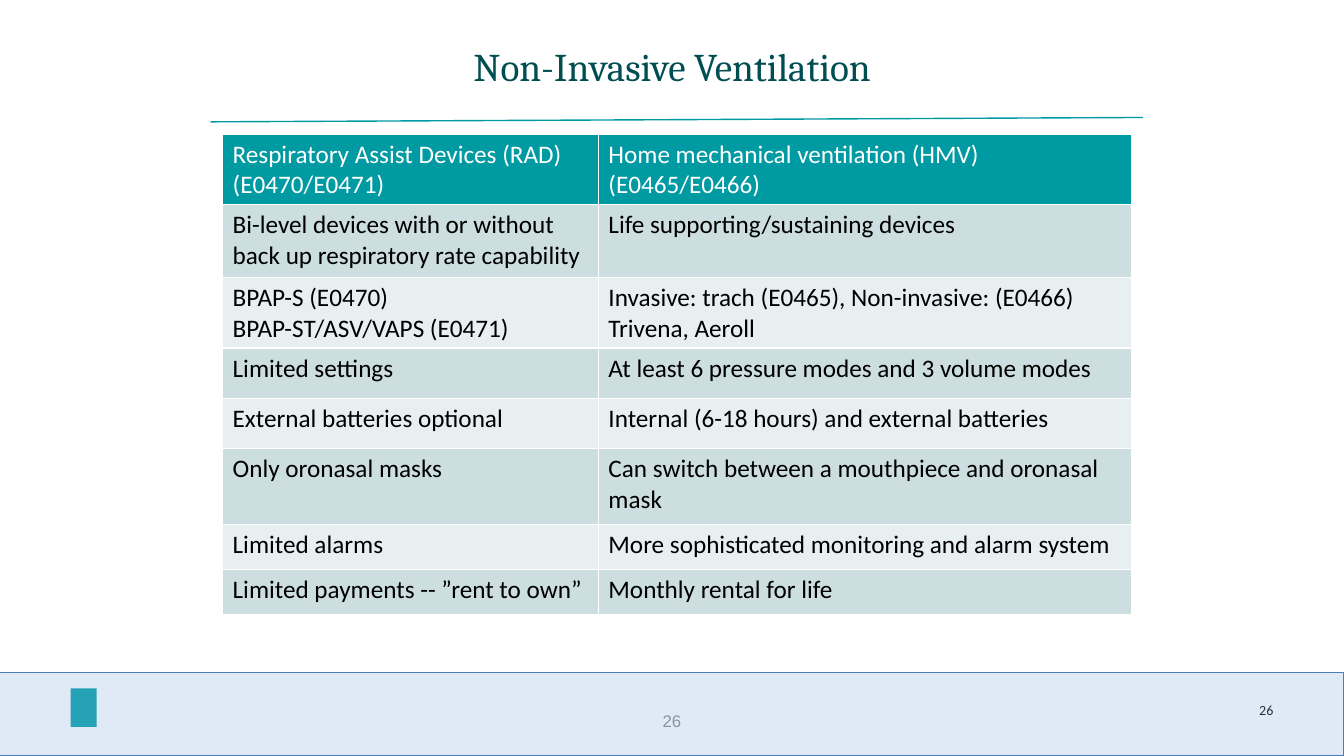
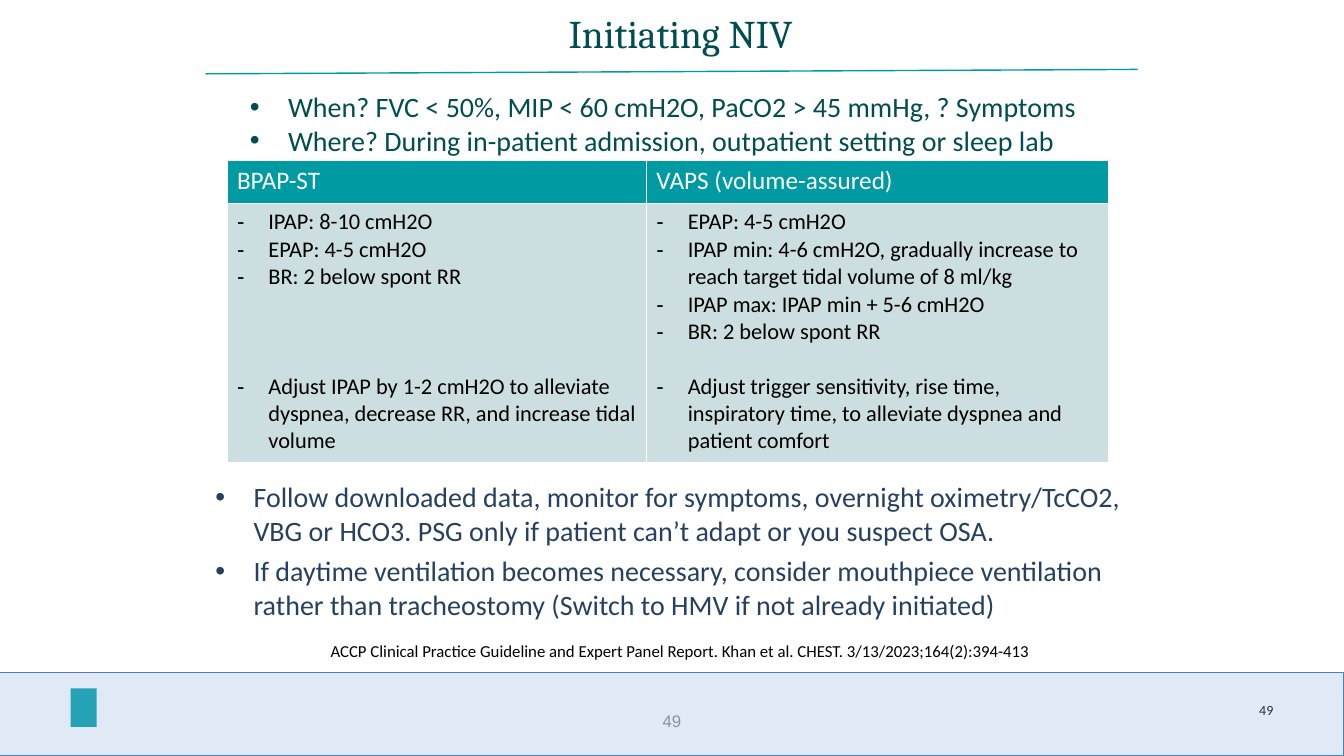
from lxml import etree
from pptx import Presentation
from pptx.dml.color import RGBColor
from pptx.enum.shapes import MSO_CONNECTOR, MSO_SHAPE
from pptx.enum.text import MSO_ANCHOR, PP_ALIGN
from pptx.oxml.ns import qn
from pptx.util import Cm, Pt

LEFT, CENTER, RIGHT = PP_ALIGN.LEFT, PP_ALIGN.CENTER, PP_ALIGN.RIGHT
TOP, MIDDLE = MSO_ANCHOR.TOP, MSO_ANCHOR.MIDDLE
RECTANGLE, STRAIGHT = MSO_SHAPE.RECTANGLE, MSO_CONNECTOR.STRAIGHT

SLIDE_WIDTH, SLIDE_HEIGHT, BAND_HEIGHT = 33.87, 19.05, 2.11
TEAL, DARK_TEAL, NAVY = "009AA3", "004D52", "254061"
BLACK, WHITE, GRAY = "000000", "FFFFFF", "898989"
BAND_FILL, BAND_LINE, BAND_ALPHA = "8EB4E3", "4A7EBB", 27
ROW_FILLS = ("E7EFF0", "CCDEE0")
TABLE_LINE = 12.5

TITLE = {"font": {"name": "Cambria", "size": Pt(28)}, "color": DARK_TEAL,
         "para": {"alignment": CENTER, "line_spacing": 0.9}}
HEADER = {"font": {"name": "Calibri", "size": Pt(18), "bold": False}, "color": WHITE}
CELL = {**HEADER, "color": BLACK}
DASH_CELL = {"font": {"name": "Calibri", "size": Pt(16)}, "color": BLACK,
             "bullet": "-", "hang": 0.79}
CRITERIA = {"font": {"name": "Calibri", "size": Pt(20)}, "color": DARK_TEAL,
            "bullet": "•", "hang": 0.96}
FOLLOW_UP = {**CRITERIA, "color": NAVY}
CITATION = {"font": {"name": "Calibri", "size": Pt(12)}, "color": BLACK}
CENTER_NUMBER = {"font": {"name": "Arial", "size": Pt(12)}, "color": GRAY,
                 "para": {"alignment": CENTER}, "anchor": MIDDLE}
CORNER_NUMBER = {"font": {"name": "Calibri", "size": Pt(10)}, "color": BLACK,
                 "para": {"alignment": RIGHT}}

DEVICE_ROWS = [
    [["Respiratory Assist Devices (RAD)", "(E0470/E0471)"],
     ["Home mechanical ventilation (HMV)", "(E0465/E0466)"]],
    [["Bi-level devices with or without back up respiratory rate capability"],
     ["Life supporting/sustaining devices"]],
    [["BPAP-S (E0470)", "BPAP-ST/ASV/VAPS (E0471)"],
     ["Invasive: trach (E0465), Non-invasive: (E0466)", "Trivena, Aeroll"]],
    [["Limited settings"], ["At least 6 pressure modes and 3 volume modes"]],
    [["External batteries optional"], ["Internal (6-18 hours) and external batteries"]],
    [["Only oronasal masks"], ["Can switch between a mouthpiece and oronasal mask"]],
    [["Limited alarms"], ["More sophisticated monitoring and alarm system"]],
    [["Limited payments -- ”rent to own”"], ["Monthly rental for life"]],
]
SETTING_ROWS = [
    [["BPAP-ST"], ["VAPS (volume-assured)"]],
    [["IPAP: 8-10 cmH2O", "EPAP: 4-5 cmH2O", "BR: 2 below spont RR",
      ("Adjust IPAP by 1-2 cmH2O to alleviate dyspnea, decrease RR, "
       "and increase tidal volume", 58.5)],
     ["EPAP: 4-5 cmH2O",
      "IPAP min: 4-6 cmH2O, gradually increase to reach target tidal volume of 8 ml/kg",
      "IPAP max: IPAP min + 5-6 cmH2O", "BR: 2 below spont RR",
      ("Adjust trigger sensitivity, rise time, inspiratory time, "
       "to alleviate dyspnea and patient comfort", 19.5)]],
]


def rgb(value):
    """Turn a hex string into a colour."""
    return RGBColor.from_string(value)


def set_all(target, values):
    """Set every attribute named in a dict."""
    for name, value in values.items():
        setattr(target, name, value)


def add_bullet(para, mark, hang):
    """Give a paragraph a bullet and a hanging indent."""
    props = para._p.get_or_add_pPr()
    props.set("marL", str(Cm(hang)))
    props.set("indent", str(-Cm(hang)))
    etree.SubElement(props, qn("a:buFont")).set("typeface", "Arial")
    etree.SubElement(props, qn("a:buChar")).set("char", mark)


def write(frame, items, style):
    """Fill a text frame; an item is a text or a text with its space before."""
    for index, item in enumerate(items):
        text, gap = (item, 0) if isinstance(item, str) else item
        para = frame.paragraphs[0] if index == 0 else frame.add_paragraph()
        if "bullet" in style:
            add_bullet(para, style["bullet"], style["hang"])
        set_all(para, {"alignment": LEFT, "space_before": Pt(gap), **style.get("para", {})})
        span = para.add_run()
        span.text = text
        set_all(span.font, style["font"])
        span.font.color.rgb = rgb(style["color"])


def add_text(page, box, items, style):
    """Place a wrapping text box without insets."""
    frame = page.shapes.add_textbox(*map(Cm, box)).text_frame
    set_all(frame, {"word_wrap": True, "vertical_anchor": style.get("anchor", TOP),
                    "margin_left": 0, "margin_right": 0,
                    "margin_top": 0, "margin_bottom": 0})
    write(frame, items, style)


def add_block(page, box, color):
    """Place a plain rectangle without outline."""
    block = page.shapes.add_shape(RECTANGLE, *map(Cm, box))
    block.shadow.inherit = False
    block.fill.solid()
    block.fill.fore_color.rgb = rgb(color)
    block.line.fill.background()
    return block


def add_footer(page, box, number):
    """Place the emblem, both page numbers and the tinted band over them."""
    left, top, width, height = box
    add_text(page, (left + width - 2.75, top + 0.74, 0.97, 0.43), [number], CORNER_NUMBER)
    add_block(page, (left + 1.78, top + 0.41, 0.66, 0.97), "009CA6")
    add_text(page, (left + (width - 7.9) / 2, top + 0.71, 7.9, 1.02), [number], CENTER_NUMBER)
    band = add_block(page, box, BAND_FILL)
    color = band._element.spPr.find(qn("a:solidFill"))[0]
    etree.SubElement(color, qn("a:alpha")).set("val", str(BAND_ALPHA * 1000))
    band.line.color.rgb = rgb(BAND_LINE)
    band.line.width = Pt(0.75)


def add_heading(page, box, title, rule_left, rule_drop):
    """Place a title and the slightly rising rule below it."""
    left, top = box[:2]
    add_text(page, box, [title], TITLE)
    start, end = left - rule_left, top + rule_drop
    rule = page.shapes.add_connector(
        STRAIGHT, Cm(start), Cm(end), Cm(start + 23.49), Cm(end - 0.11))
    rule.line.color.rgb = rgb(TEAL)
    rule.line.width = Pt(1)
    etree.SubElement(rule._element.spPr, qn("a:effectLst"))


def add_borders(cell):
    """Draw thin white lines on all four sides of a cell."""
    props = cell._tc.get_or_add_tcPr()
    for index, side in enumerate("LRTB"):
        line = etree.Element(qn(f"a:ln{side}"), w=str(Pt(1)))
        fill = etree.SubElement(line, qn("a:solidFill"))
        etree.SubElement(fill, qn("a:srgbClr")).set("val", WHITE)
        props.insert(index, line)


def add_grid(page, corner, widths, heights, rows, body):
    """Place a table with a teal header and banded rows."""
    size = (sum(widths), sum(heights))
    table = page.shapes.add_table(
        len(heights), len(widths), *map(Cm, corner + size)).table
    for column, width in zip(table.columns, widths):
        column.width = Cm(width)
    for index, (row, height) in enumerate(zip(table.rows, heights)):
        row.height = Cm(height)
        for cell, items in zip(row.cells, rows[index]):
            cell.fill.solid()
            cell.fill.fore_color.rgb = rgb(ROW_FILLS[index % 2] if index else TEAL)
            add_borders(cell)
            write(cell.text_frame, items, body if index else HEADER)


def add_page(deck, number):
    """Add a blank slide with the shared footer."""
    page = deck.slides.add_slide(deck.slide_layouts[6])
    add_footer(page, (0, SLIDE_HEIGHT - BAND_HEIGHT, SLIDE_WIDTH, BAND_HEIGHT), number)
    return page


def build_devices(deck):
    """Build the comparison of device classes."""
    page = add_page(deck, "26")
    add_heading(page, (5.51, 1.19, 22.86, 1.6), "Non-Invasive Ventilation", 0.2, 1.88)
    add_grid(page, (5.61, 3.38), (9.47, 13.44),
             (1.78, 1.83, 1.78, 1.27, 1.27, 1.9, 1.14, 1.14), DEVICE_ROWS, CELL)


def build_initiation(deck):
    """Build the slide on starting ventilation."""
    page = add_page(deck, "49")
    add_text(page, (6.3, 2.26, 24.08, 2), [
        "When? FVC < 50%, MIP < 60 cmH2O, PaCO2 > 45 mmHg, ? Symptoms",
        "Where? During in-patient admission, outpatient setting or sleep lab",
    ], CRITERIA)
    add_heading(page, (5.72, 0.36, 22.86, 1.4), "Initiating NIV", 0.54, 1.5)
    add_grid(page, (5.72, 4.04), (10.57, 11.66), (1.09, 6.53), SETTING_ROWS, DASH_CELL)
    add_text(page, (5.43, 12.09, 23.52, 3.6), [
        "Follow downloaded data, monitor for symptoms, overnight oximetry/TcCO2, "
        "VBG or HCO3. PSG only if patient can’t adapt or you suspect OSA.",
        ("If daytime ventilation becomes necessary, consider mouthpiece ventilation "
         "rather than tracheostomy (Switch to HMV if not already initiated)", 5),
    ], FOLLOW_UP)
    add_text(page, (8.33, 16.15, 18.95, 0.5), [
        "ACCP Clinical Practice Guideline and Expert Panel Report. "
        "Khan et al. CHEST. 3/13/2023;164(2):394-413"], CITATION)


def main():
    """Build and save the deck."""
    deck = Presentation()
    deck.slide_width, deck.slide_height = Cm(SLIDE_WIDTH), Cm(SLIDE_HEIGHT)
    build_devices(deck)
    build_initiation(deck)
    deck.save("out.pptx")


if __name__ == "__main__":
    main()
